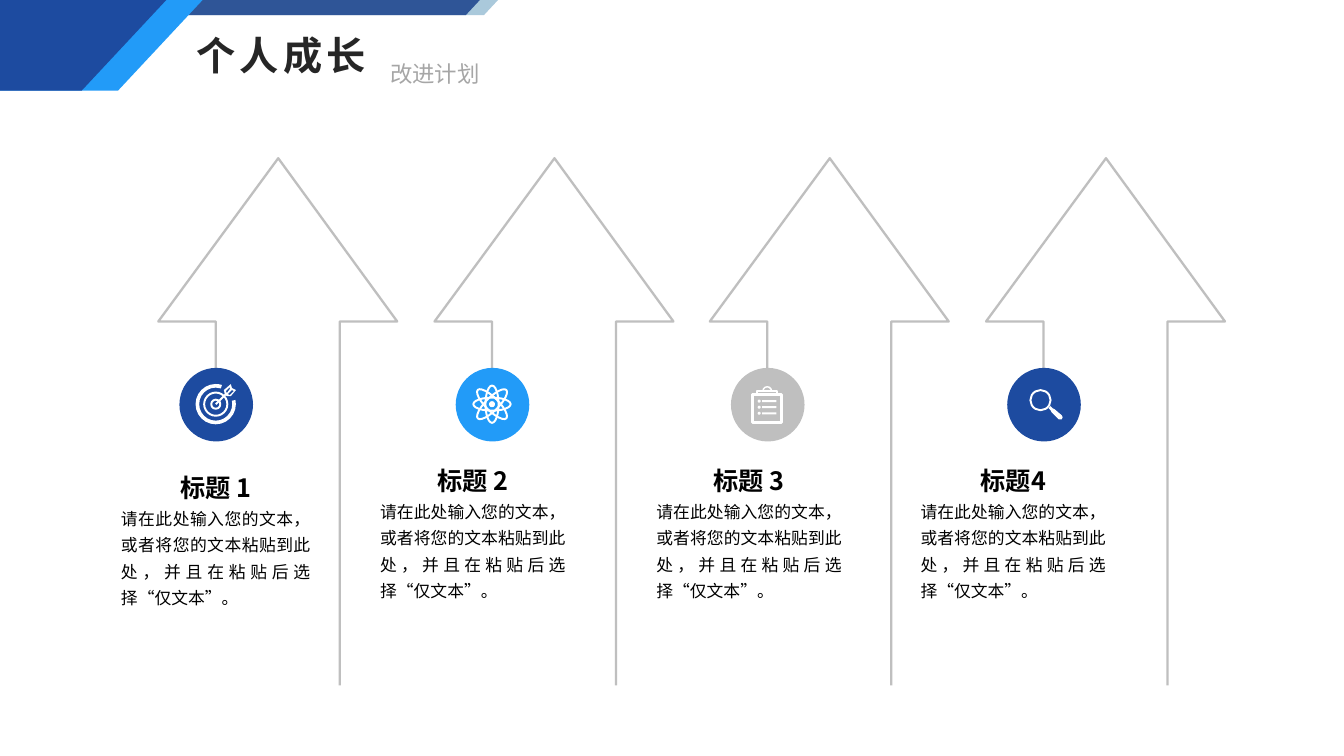
from lxml import etree
from pptx import Presentation
from pptx import util as u
from pptx.dml.color import RGBColor
from pptx.enum import shapes as kinds, text as txt
from pptx.oxml.ns import qn

# Content
TITLE, SUBTITLE = "个人成长", "改进计划"
ADVICE = "请在此处输入您的文本，或者将您的文本粘贴到此处，并且在粘贴后选择“仅文本”。"
# heading, text box (left, top, width), badge colour
STEPS = [
    ("标题 1", (120, 460, 188), "navy"),
    ("标题 2", (377, 453, 184), "sky"),
    ("标题 3", (651, 453, 184), "gray"),
    ("标题4", (913, 453, 184), "navy"),
]
THEME = {
    "font": "Noto Sans CJK SC",
    "navy": ("1D4BA0", 100), "sky": ("229BF8", 100), "gray": ("A5A5A5", 70),
    "ribbon": ("2F5597", 100), "ribbon_tail": ("1A6D9F", 37), "icon": ("FFFFFF", 100),
    "arrow": "BFBFBF", "title": "262626", "subtitle": "A6A6A6", "text": "000000",
    "title_pt": 28, "subtitle_pt": 16, "heading_pt": 18, "body_pt": 12, "arrow_pt": 1.63,
}
OVAL, BAR = kinds.MSO_SHAPE.OVAL, kinds.MSO_SHAPE.RECTANGLE
BAND = kinds.MSO_SHAPE.BLOCK_ARC

# Icons, in px around the badge centre.
# Part: kind, centre x, centre y, width, height, then turn, stroke (pt) or adjustments
TARGET = [
    (BAND, 0, 0, 40, 40, {"adjust": (208.8, 172.8, 0.09)}),
    (OVAL, 0, 0, 23, 23, {"stroke": 1.4}),
    (OVAL, 0, 0, 9, 9, {"stroke": 1.4}),
    (BAR, 5, -5, 14, 2, {"turn": -45}),
]
ATOM = [(OVAL, 0, 0, width, 13, {"turn": turn, "stroke": 1.4})
        for turn, width in ((90, 37), (0, 37), (135, 40), (45, 40))]
ATOM.append((OVAL, 0, 0, 6, 6, {}))
CLIPBOARD = [
    (BAR, 0, 4, 29, 28, {"stroke": 2}),
    (BAR, 0, -11, 20, 4, {"stroke": 1.2}),
    (BAND, 0, -13, 10, 10, {"adjust": (108, 0, 0.15)}),
]
for row_y in (-3, 3, 9):
    CLIPBOARD += [(OVAL, -8, row_y, 3, 3, {}), (BAR, 2, row_y, 14, 2, {})]
MAGNIFIER = [(OVAL, -3, -4, 20, 20, {"stroke": 1.4})]
FLETCHING = [
    [(8, -14), (15, -20), (16, -16), (20, -14), (15, -8), (11, -8), (9, -10)],
    [(14, -17), (10, -13), (11, -11), (14, -15)],
    [(16, -14), (12, -10), (14, -9), (18, -13)],
]
HANDLE = [[(7, 2), (9, 4), (11, 5), (18, 11), (19, 13), (18, 15), (15, 15),
           (8, 8), (7, 6), (5, 4)]]
ICONS = [(TARGET, FLETCHING), (ATOM, None), (CLIPBOARD, None), (MAGNIFIER, HANDLE)]

# Layout: 100 px to the inch
PX = 9144
STEP_GAP = 273.67
STEM_X, BADGE_Y, BADGE = 214, 401, 73
ARROW = [(337, 680), (337, 319), (394, 319), (276, 157), (157, 319), (214, 319), (214, 365)]

prs = Presentation()
prs.slide_width, prs.slide_height = 1333 * PX, 750 * PX
slide = prs.slides.add_slide(prs.slide_layouts[4])


def apply(target, values):
    for name, value in values.items():
        setattr(target, name, value)


def place(shape, left, top, width, height):
    box = zip(("left", "top", "width", "height"), (left, top, width, height))
    apply(shape, {name: px * PX for name, px in box})


def paint(shape, role):
    colour, opacity = THEME[role]
    shape.shadow.inherit = False
    shape.line.fill.background()
    shape.fill.solid()
    shape.fill.fore_color.rgb = RGBColor.from_string(colour)
    if opacity < 100:
        tint = shape.fill._xPr.find(".//" + qn("a:srgbClr"))
        etree.SubElement(tint, qn("a:alpha"), val=str(opacity * 1000))


def trace(shape, colour, points):
    shape.shadow.inherit = False
    shape.fill.background()
    shape.line.color.rgb = RGBColor.from_string(colour)
    shape.line.width = u.Pt(points)


def preset(kind, left, top, width, height, role):
    shape = slide.shapes.add_shape(kind, *(int(n * PX) for n in (left, top, width, height)))
    paint(shape, role)
    return shape


def outline(contours, dx=0, dy=0, close=True):
    builder = None
    for contour in contours:
        first, *rest = [((x + dx) * PX, (y + dy) * PX) for x, y in contour]
        if builder is None:
            builder = slide.shapes.build_freeform(*first)
        else:
            builder.move_to(*first)
        builder.add_line_segments(rest, close=close)
    return builder.convert_to_shape()


def draw_icon(parts, contours, x, y):
    for kind, cx, cy, width, height, extra in parts:
        part = preset(kind, x + cx - width / 2, y + cy - height / 2, width, height, "icon")
        part.rotation = extra.get("turn", 0)
        for i, value in enumerate(extra.get("adjust", ())):
            part.adjustments[i] = value
        if "stroke" in extra:
            trace(part, THEME["icon"][0], extra["stroke"])
    if contours:
        paint(outline(contours, x, y), "icon")


def write(paragraph, words, size, colour, bold=False):
    run = paragraph.add_run()
    run.text = words
    apply(run.font, {"name": THEME["font"], "size": u.Pt(size), "bold": bold})
    run.font.color.rgb = RGBColor.from_string(THEME[colour])
    etree.SubElement(run.font._element, qn("a:ea"), typeface=THEME["font"])
    return run


# Header band
for left, role in ((118, "ribbon_tail"), (100, "ribbon")):
    preset(kinds.MSO_SHAPE.PARALLELOGRAM, left, 0, 376, 15, role).adjustments[0] = 0.93
for corners, role in (
    ([(10, 0), (201, 0), (117, 90), (-3, 90), (-3, 14)], "sky"),
    ([(-2, 0), (165, 0), (81, 90), (-2, 90)], "navy"),
):
    paint(outline([corners]), role)

# Title and subtitle
title, *cards = list(slide.placeholders)[:5]
place(title, 185, 26, 192, 57)
subtitle = slide.shapes.add_textbox(0, 0, 0, 0)
place(subtitle, 377, 55, 109, 37)
for holder, words, role in ((title, TITLE, "title"), (subtitle, SUBTITLE, "subtitle")):
    apply(holder.text_frame, {
        "word_wrap": False, "vertical_anchor": txt.MSO_ANCHOR.TOP,
        "auto_size": txt.MSO_AUTO_SIZE.SHAPE_TO_FIT_TEXT})
    line = holder.text_frame.paragraphs[0]
    line.alignment = txt.PP_ALIGN.LEFT
    run = write(line, words, THEME[role + "_pt"], role, bold=role == "title")
    if role == "title":
        run.font._element.set("spc", "300")

# Steps: arrow, badge, icon and text
for i, ((heading, (left, top, width), role), icon, card) in enumerate(zip(STEPS, ICONS, cards)):
    shift = round(i * STEP_GAP)
    trace(outline([ARROW], dx=shift, close=False), THEME["arrow"], THEME["arrow_pt"])

    stem = STEM_X + shift
    preset(OVAL, stem - 36, BADGE_Y - 36, BADGE, BADGE, role)
    draw_icon(*icon, stem, BADGE_Y)

    place(card, left, top, width, 144)
    frame = card.text_frame
    apply(frame, {
        "margin_left": 0, "margin_top": 0, "margin_right": 0, "margin_bottom": 0,
        "word_wrap": True, "vertical_anchor": txt.MSO_ANCHOR.TOP,
        "auto_size": txt.MSO_AUTO_SIZE.SHAPE_TO_FIT_TEXT})
    for paragraph, words, size, align in (
        (frame.paragraphs[0], heading, "heading_pt", txt.PP_ALIGN.CENTER),
        (frame.add_paragraph(), ADVICE, "body_pt", txt.PP_ALIGN.JUSTIFY),
    ):
        apply(paragraph, {"alignment": align, "line_spacing": 1.3, "space_before": u.Pt(0)})
        props = paragraph._p.get_or_add_pPr()
        props.set("marL", "0")
        props.set("indent", "0")
        etree.SubElement(props, qn("a:buNone"))
        write(paragraph, words, THEME[size], "text", bold=size == "heading_pt")

prs.save("out.pptx")
